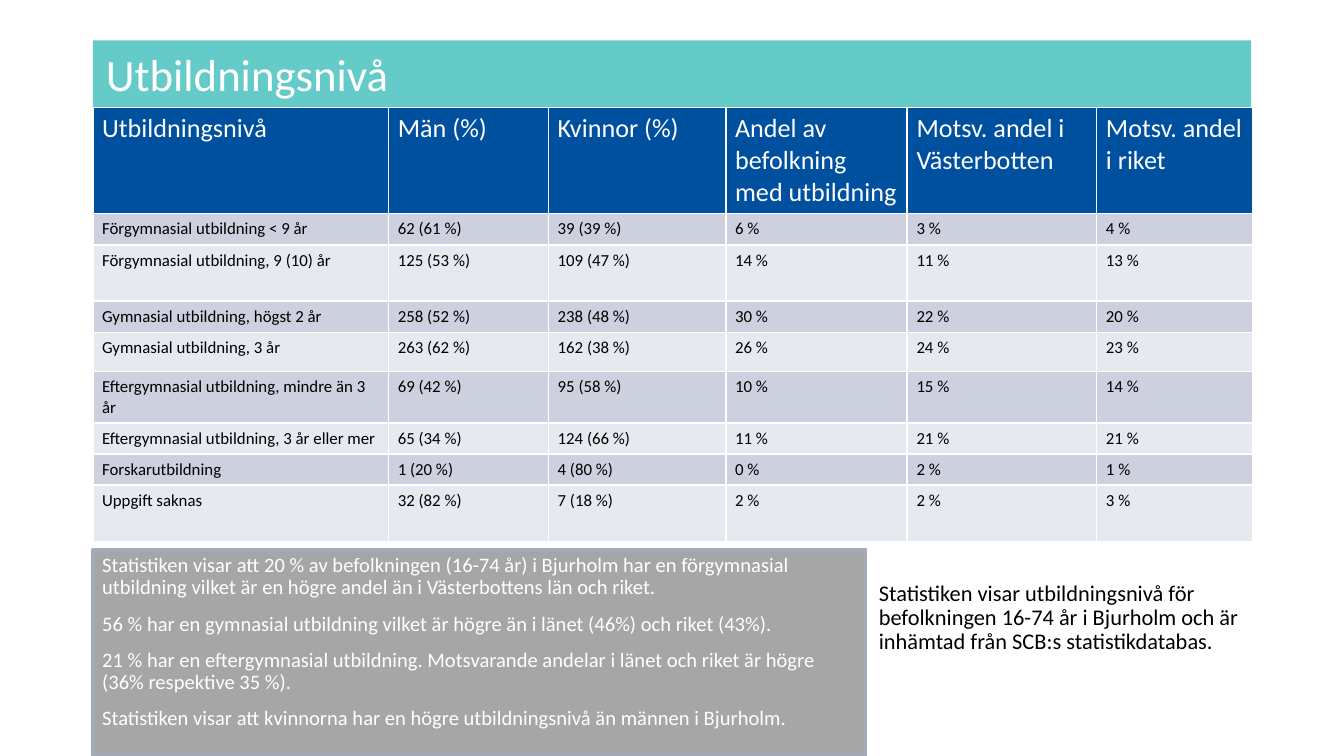
from pptx import Presentation
from pptx.dml.color import RGBColor
from pptx.enum.shapes import MSO_SHAPE
from pptx.enum.text import MSO_ANCHOR, PP_ALIGN
from pptx.util import Inches, Pt

COLORS = {
    "white": "FFFFFF",
    "black": "000000",
    "teal": "64CBC9",
    "blue": "0050A0",
    "band_dark": "CCD0DF",
    "band_light": "E7E9F0",
    "grey": "A6A6A6",
    "grey_edge": "A3ABB6",
}
FONT = "Calibri"
TIGHT = (0.07, 0.04)
NORMAL = (0.1, 0.05)
SLIDE_WIDTH = 10

COLUMN_WIDTHS = [2.2, 1.19, 1.32, 1.35, 1.41, 1.16]
ROW_HEIGHTS = [0.75, 0.23, 0.42, 0.23, 0.29, 0.38, 0.23, 0.23, 0.42]
EDUCATION = [
    ["Utbildningsnivå", "Män (%)", "Kvinnor (%)", "Andel av befolkning med utbildning",
     "Motsv. andel i Västerbotten", "Motsv. andel i riket"],
    ["Förgymnasial utbildning < 9 år", "62 (61 %)", "39 (39 %)", "6 %", "3 %", "4 %"],
    ["Förgymnasial utbildning, 9 (10) år", "125 (53 %)", "109 (47 %)", "14 %", "11 %", "13 %"],
    ["Gymnasial utbildning, högst 2 år", "258 (52 %)", "238 (48 %)", "30 %", "22 %", "20 %"],
    ["Gymnasial utbildning, 3 år", "263 (62 %)", "162 (38 %)", "26 %", "24 %", "23 %"],
    ["Eftergymnasial utbildning, mindre än 3 år", "69 (42 %)", "95 (58 %)", "10 %", "15 %", "14 %"],
    ["Eftergymnasial utbildning, 3 år eller mer", "65 (34 %)", "124 (66 %)", "11 %", "21 %", "21 %"],
    ["Forskarutbildning", "1 (20 %)", "4 (80 %)", "0 %", "2 %", "1 %"],
    ["Uppgift saknas", "32 (82 %)", "7 (18 %)", "2 %", "2 %", "3 %"],
]
FINDINGS = [
    "Statistiken visar att 20 % av befolkningen (16-74 år) i Bjurholm har en förgymnasial "
    "utbildning vilket är en högre andel än i Västerbottens län och riket.",
    "56 % har en gymnasial utbildning vilket är högre än i länet (46%) och riket (43%).",
    "21 % har en eftergymnasial utbildning. Motsvarande andelar i länet och riket är högre "
    "(36% respektive 35 %).",
    "Statistiken visar att kvinnorna har en högre utbildningsnivå än männen i Bjurholm.",
]
SOURCE_NOTE = ("Statistiken visar utbildningsnivå för befolkningen 16-74 år i Bjurholm "
               "och är inhämtad från SCB:s statistikdatabas.")


def rgb(name):
    return RGBColor.from_string(COLORS[name])


def write(frame, paragraphs, *, size, color, line_spacing=1.0, space_before=0,
          anchor=MSO_ANCHOR.TOP, insets=NORMAL):
    frame.word_wrap = True
    frame.vertical_anchor = anchor
    frame.margin_left = frame.margin_right = Inches(insets[0])
    frame.margin_top = frame.margin_bottom = Inches(insets[1])
    for index, text in enumerate(paragraphs):
        paragraph = frame.add_paragraph() if index else frame.paragraphs[0]
        paragraph.alignment = PP_ALIGN.LEFT
        paragraph.line_spacing = line_spacing
        paragraph.space_before = Pt(space_before if index else 0)
        run = paragraph.add_run()
        run.text = text
        run.font.name = FONT
        run.font.size = Pt(size)
        run.font.bold = False
        run.font.color.rgb = rgb(color)


class SlideBuilder:
    def __init__(self, slide):
        self.slide = slide

    def panel(self, box, paragraphs, *, fill, edge=None, **text_format):
        panel = self.slide.shapes.add_shape(MSO_SHAPE.RECTANGLE, *map(Inches, box))
        panel.shadow.inherit = False
        panel.fill.solid()
        panel.fill.fore_color.rgb = rgb(fill)
        if edge:
            panel.line.color.rgb = rgb(edge)
            panel.line.width = Pt(2)
        else:
            panel.line.fill.background()
        write(panel.text_frame, paragraphs, **text_format)

    def note(self, box, paragraphs, **text_format):
        note = self.slide.shapes.add_textbox(*map(Inches, box))
        write(note.text_frame, paragraphs, **text_format)

    def table(self, left, top, rows, widths, heights):
        box = map(Inches, (left, top, sum(widths), sum(heights)))
        table = self.slide.shapes.add_table(len(rows), len(widths), *box).table
        for column, width in zip(table.columns, widths):
            column.width = Inches(width)
        for index, (row, height, values) in enumerate(zip(table.rows, heights, rows)):
            row.height = Inches(height)
            header = index == 0
            fill = "blue" if header else "band_dark" if index % 2 else "band_light"
            for cell, value in zip(row.cells, values):
                cell.fill.solid()
                cell.fill.fore_color.rgb = rgb(fill)
                cell.margin_left = cell.margin_right = Inches(TIGHT[0])
                cell.margin_top = cell.margin_bottom = Inches(TIGHT[1])
                write(cell.text_frame, [value], size=14 if header else 9,
                      color="white" if header else "black", insets=TIGHT)


def main():
    presentation = Presentation()
    presentation.slide_width = Inches(SLIDE_WIDTH)
    presentation.slide_height = Inches(SLIDE_WIDTH * 9 / 16)
    builder = SlideBuilder(presentation.slides.add_slide(presentation.slide_layouts[6]))

    builder.panel((0.69, 0.3, 8.62, 0.5), ["Utbildningsnivå"], fill="teal",
                  size=24, color="white", anchor=MSO_ANCHOR.MIDDLE)
    builder.table(0.69, 0.8, EDUCATION, COLUMN_WIDTHS, ROW_HEIGHTS)
    builder.panel((0.69, 4.09, 5.75, 1.53), FINDINGS, fill="grey", edge="grey_edge",
                  size=11, color="white", line_spacing=0.9, space_before=7.5, insets=TIGHT)
    builder.note((6.44, 4.28, 2.88, 0.81), [SOURCE_NOTE], size=12, color="black",
                 line_spacing=0.9)

    presentation.save("out.pptx")


if __name__ == "__main__":
    main()
